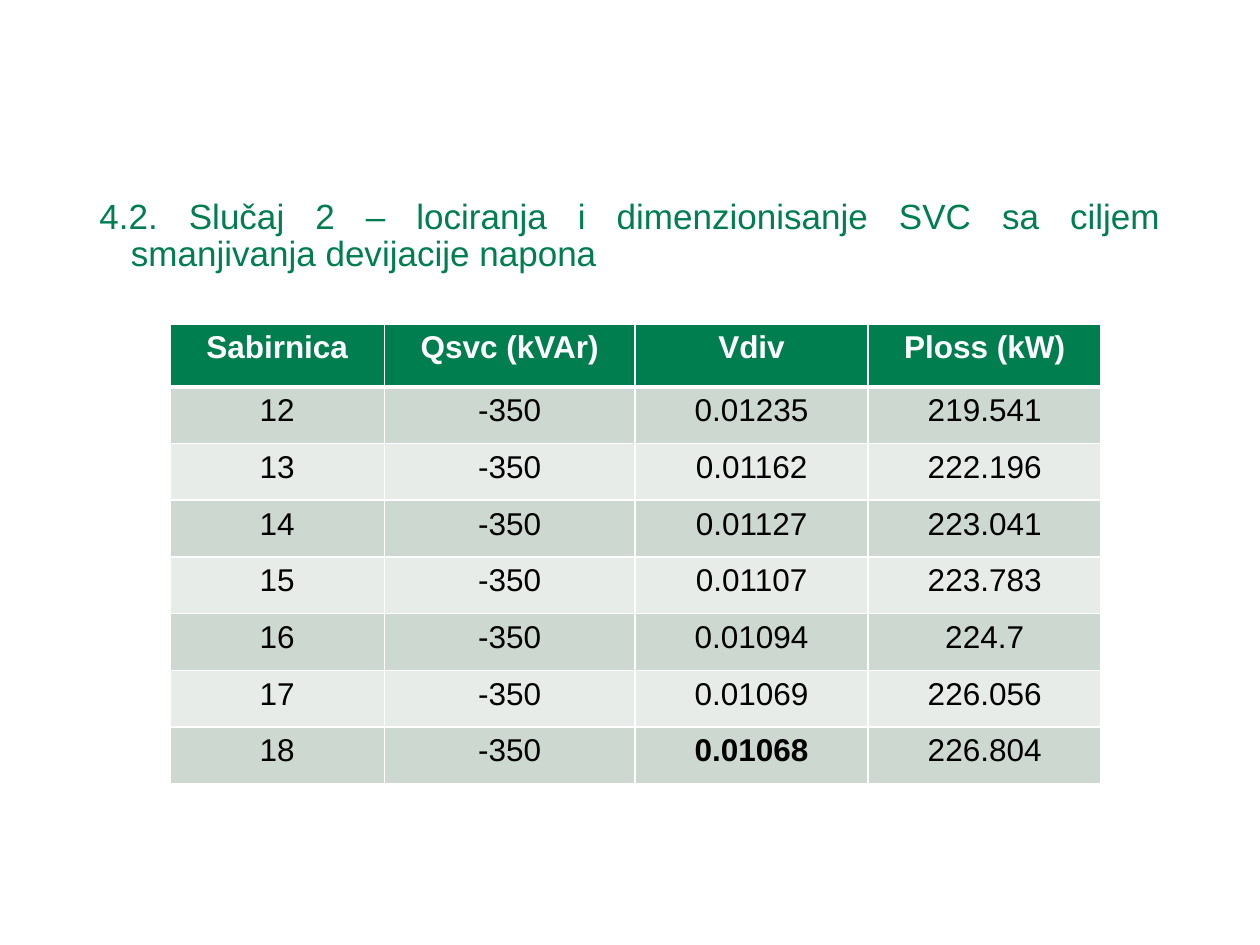
from lxml import etree
from pptx import Presentation
from pptx import util as u
from pptx.dml import color
from pptx.enum import text
from pptx.oxml import ns

GREEN, WHITE, BLACK = "007E4F", "FFFFFF", "000000"
BANDS = ["CCD8D0", "E7ECE9"]


def add_run(paragraph, content, size, hex_color, bold=False):
    run = paragraph.add_run()
    run.text = content
    run.font.name = "Arial"
    run.font.size = u.Pt(size)
    run.font.bold = bold
    run.font.color.rgb = color.RGBColor.from_string(hex_color)


def add_border(cell, side, width):
    """Draw a white line on one side (L, R, T or B); call before filling the cell."""
    line = etree.SubElement(cell._tc.get_or_add_tcPr(), ns.qn(f"a:ln{side}"), w=str(u.Pt(width)))
    fill = etree.SubElement(line, ns.qn("a:solidFill"))
    etree.SubElement(fill, ns.qn("a:srgbClr"), val=WHITE)


presentation = Presentation()
presentation.slide_width = u.Inches(10)
presentation.slide_height = u.Inches(7.5)
slide = presentation.slides.add_slide(presentation.slide_layouts[6])

# Heading
heading = slide.shapes.add_textbox(u.Inches(0.69), u.Inches(1.53), u.Inches(8.62), u.Inches(4.76))
heading.text_frame.word_wrap = True
paragraph = heading.text_frame.paragraphs[0]
paragraph.alignment = text.PP_ALIGN.JUSTIFY
paragraph.line_spacing = 0.9
properties = paragraph._p.get_or_add_pPr()
properties.set("marL", str(u.Inches(0.25)))
properties.set("indent", str(u.Inches(-0.25)))
add_run(paragraph, "4.2. Slučaj 2 – lociranja i dimenzionisanje SVC sa ciljem smanjivanja devijacije napona",
        20, GREEN)

# Results table
rows = [
    ("Sabirnica", "Qsvc (kVAr)", "Vdiv", "Ploss (kW)"),
    ("12", "-350", "0.01235", "219.541"),
    ("13", "-350", "0.01162", "222.196"),
    ("14", "-350", "0.01127", "223.041"),
    ("15", "-350", "0.01107", "223.783"),
    ("16", "-350", "0.01094", "224.7"),
    ("17", "-350", "0.01069", "226.056"),
    ("18", "-350", "0.01068", "226.804"),
]
best_deviation = "0.01068"
column_widths = [1.7, 1.99, 1.85, 1.85]

table = slide.shapes.add_table(len(rows), len(column_widths), u.Inches(1.35), u.Inches(2.57),
                               u.Inches(7.38), u.Inches(3.62)).table
for column, width in zip(table.columns, column_widths):
    column.width = u.Inches(width)

for row_index, values in enumerate(rows):
    is_header = row_index == 0
    table.rows[row_index].height = u.Inches(0.48 if is_header else 0.45)
    if is_header:
        table.rows[row_index].height = u.Inches(0.5)
    for column_index, value in enumerate(values):
        cell = table.cell(row_index, column_index)
        add_border(cell, "L", 1)
        add_border(cell, "R", 1)
        add_border(cell, "T", 3 if row_index == 1 else 1)
        add_border(cell, "B", 3 if is_header else 1)
        cell.fill.solid()
        fill_color = GREEN if is_header else BANDS[(row_index - 1) % 2]
        cell.fill.fore_color.rgb = color.RGBColor.from_string(fill_color)
        paragraph = cell.text_frame.paragraphs[0]
        paragraph.alignment = text.PP_ALIGN.CENTER
        add_run(paragraph, value, 18, WHITE if is_header else BLACK,
                bold=is_header or value == best_deviation)

presentation.save("out.pptx")
